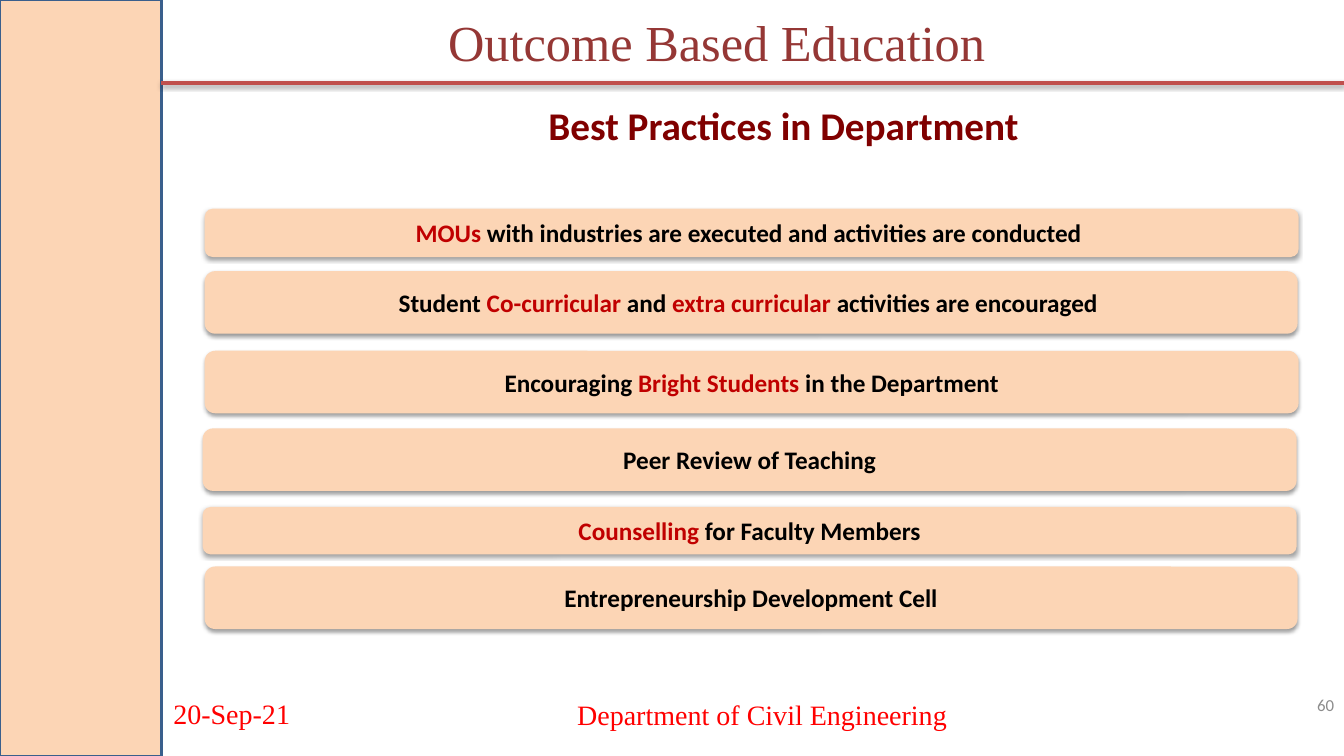
from lxml.etree import SubElement
from pptx import Presentation
from pptx.dml.color import RGBColor
from pptx.enum.shapes import MSO_CONNECTOR, MSO_SHAPE
from pptx.enum.text import MSO_ANCHOR, PP_ALIGN
from pptx.oxml.ns import qn
from pptx.util import Inches, Pt

PEACH, RED, BLACK = "FCD5B5", "C00000", "000000"
SERIF, SANS = "Times New Roman", "Calibri"

# left, top, width, height, then (text, colour) runs
PRACTICES = [
    (2.03, 2.07, 10.85, 0.48, [
        ("MOUs ", RED),
        ("with industries are executed and activities are conducted ", BLACK)]),
    (2.03, 2.69, 10.84, 0.62, [
        ("Student ", BLACK), ("Co-curricular", RED), (" and ", BLACK),
        ("extra curricular ", RED), ("activities are encouraged ", BLACK)]),
    (2.03, 3.48, 10.85, 0.62, [
        ("Encouraging ", BLACK), ("Bright Students ", RED),
        ("in the Department", BLACK)]),
    (2.01, 4.25, 10.85, 0.62, [("Peer Review of Teaching", BLACK)]),
    (2.01, 5.03, 10.85, 0.47, [
        ("Counselling", RED), (" for Faculty Members", BLACK)]),
    (2.03, 5.62, 10.84, 0.62, [("Entrepreneurship Development Cell", BLACK)]),
]


def color(hex_string):
    return RGBColor.from_string(hex_string)


def add_shadow(shape):
    """Give a shape or connector a soft shadow that falls straight down."""
    properties = shape._element.spPr
    for old_effects in properties.findall(qn("a:effectLst")):
        properties.remove(old_effects)
    effects = SubElement(properties, qn("a:effectLst"))
    shadow = SubElement(effects, qn("a:outerShdw"), blurRad=str(Pt(3.1)),
                        dist=str(Pt(1.6)), dir="5400000", rotWithShape="0")
    shade = SubElement(shadow, qn("a:srgbClr"), val=BLACK)
    SubElement(shade, qn("a:alpha"), val="38000")


def add_sidebar(slide):
    shape = slide.shapes.add_shape(MSO_SHAPE.RECTANGLE, 0, 0, Inches(1.6), Inches(7.5))
    shape.shadow.inherit = False
    shape.fill.solid()
    shape.fill.fore_color.rgb = color(PEACH)
    shape.line.color.rgb = color("3A5F8C")
    shape.line.width = Pt(2)


def add_title_rule(slide):
    rule = slide.shapes.add_connector(
        MSO_CONNECTOR.STRAIGHT, Inches(1.6), Inches(0.82), Inches(13.33), Inches(0.82))
    rule.line.color.rgb = color("C0504D")
    rule.line.width = Pt(3)
    add_shadow(rule)


def add_label(slide, box, text, size, font_name, font_color,
              align=PP_ALIGN.CENTER, anchor=MSO_ANCHOR.TOP, bold=False):
    text_box = slide.shapes.add_textbox(*map(Inches, box))
    frame = text_box.text_frame
    frame.word_wrap = True
    frame.vertical_anchor = anchor
    paragraph = frame.paragraphs[0]
    paragraph.text = text
    paragraph.alignment = align
    font = paragraph.font
    font.name, font.size, font.bold = font_name, Pt(size), bold
    font.color.rgb = color(font_color)


def add_practice(slide, left, top, width, height, runs):
    shape = slide.shapes.add_shape(
        MSO_SHAPE.ROUNDED_RECTANGLE, *map(Inches, (left, top, width, height)))
    shape.fill.solid()
    shape.fill.fore_color.rgb = color(PEACH)
    shape.line.fill.background()
    add_shadow(shape)
    frame = shape.text_frame
    frame.word_wrap = True
    frame.vertical_anchor = MSO_ANCHOR.MIDDLE
    paragraph = frame.paragraphs[0]
    paragraph.alignment = PP_ALIGN.CENTER
    font = paragraph.font
    font.name, font.size, font.bold = SANS, Pt(18), True
    for text, run_color in runs:
        run = paragraph.add_run()
        run.text = text
        run.font.color.rgb = color(run_color)


def main():
    presentation = Presentation()
    presentation.slide_width = Inches(13.33)
    presentation.slide_height = Inches(7.5)
    slide = presentation.slides.add_slide(presentation.slide_layouts[6])

    add_sidebar(slide)
    add_title_rule(slide)
    add_label(slide, (1.62, 6.9, 3.11, 0.35), "20-Sep-21", 20, SERIF, "FF0000",
              PP_ALIGN.LEFT, MSO_ANCHOR.MIDDLE)
    add_label(slide, (12.44, 6.79, 0.89, 0.4), "60", 12, SANS, "8C8C8C",
              PP_ALIGN.RIGHT, MSO_ANCHOR.MIDDLE)
    add_label(slide, (4.78, 6.89, 5.56, 0.4), "Department of Civil Engineering",
              20, SERIF, "FF0000", anchor=MSO_ANCHOR.MIDDLE)
    add_label(slide, (2, 0.06, 10.22, 0.71), "Outcome Based Education",
              36, SERIF, "953735")
    add_label(slide, (3.29, 0.96, 8.96, 0.57), "Best Practices in Department",
              28, SANS, "800000", bold=True)
    for practice in PRACTICES:
        add_practice(slide, *practice)

    presentation.save("out.pptx")


if __name__ == "__main__":
    main()
